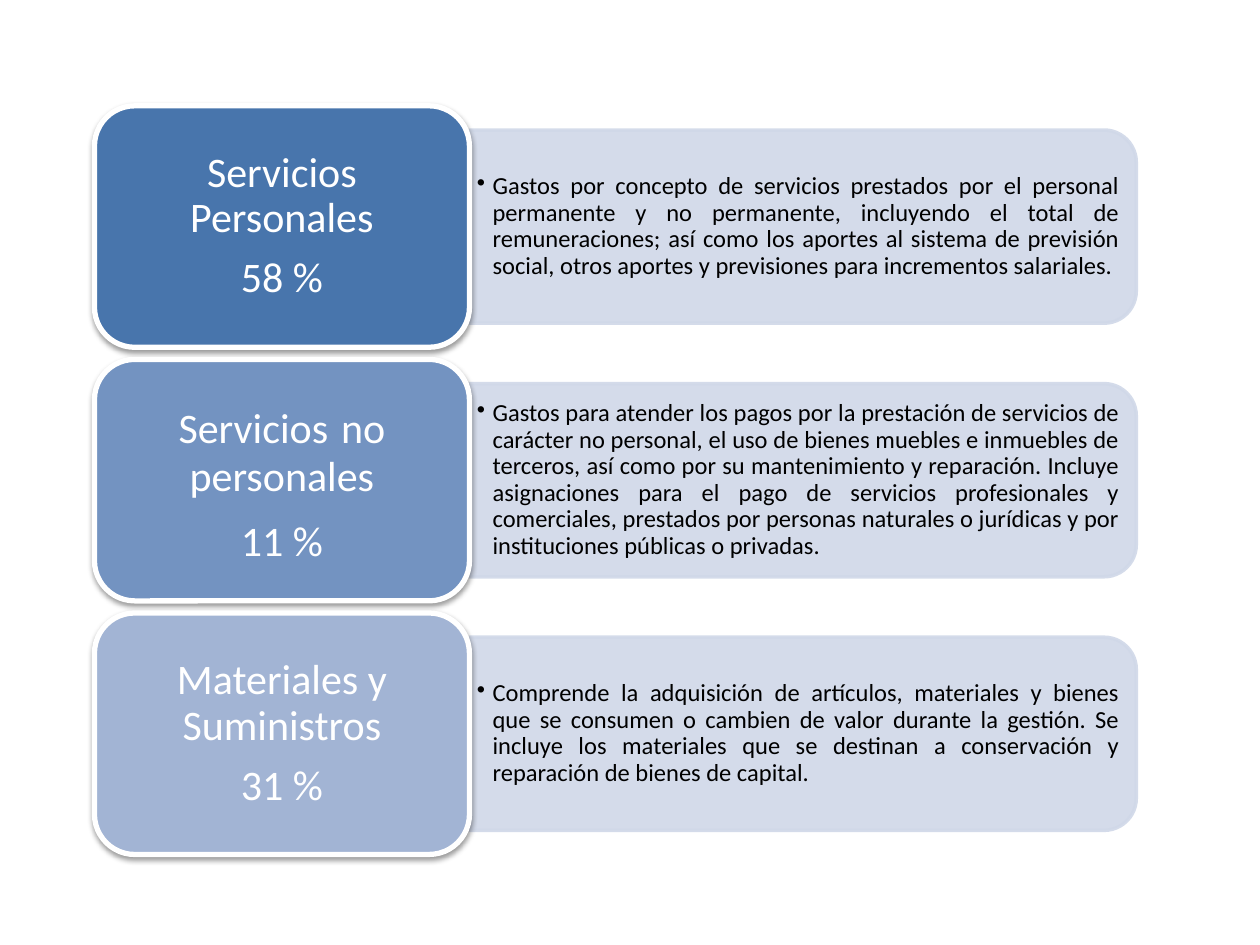
from lxml.etree import SubElement
from pptx import Presentation
from pptx.dml.color import RGBColor
from pptx.enum.shapes import MSO_SHAPE
from pptx.enum.text import MSO_ANCHOR, PP_ALIGN
from pptx.oxml.ns import qn
from pptx.util import Pt

# Each label is a list of paragraphs; a paragraph is a list of (text, size name).
CATEGORIES = [
    {
        "label": [[("Servicios Personales", "label")], [("58 %", "label")]],
        "color": "4875AC",
        "description": "Gastos por concepto de servicios prestados por el personal "
        "permanente y no permanente, incluyendo el total de remuneraciones; así como "
        "los aportes al sistema de previsión social, otros aportes y previsiones para "
        "incrementos salariales.",
    },
    {
        "label": [
            [("Servicios", "label"), (" ", "wide_space"), ("no personales", "label")],
            [("11 %", "label")],
        ],
        "color": "7393C1",
        "description": "Gastos para atender los pagos por la prestación de servicios de "
        "carácter no personal, el uso de bienes muebles e inmuebles de terceros, así "
        "como por su mantenimiento y reparación. Incluye asignaciones para el pago de "
        "servicios profesionales y comerciales, prestados por personas naturales o "
        "jurídicas y por instituciones públicas o privadas.",
    },
    {
        "label": [[("Materiales y Suministros", "label")], [("31 %", "label")]],
        "color": "A2B4D4",
        "description": "Comprende la adquisición de artículos, materiales y bienes que "
        "se consumen o cambien de valor durante la gestión. Se incluye los materiales "
        "que se destinan a conservación y reparación de bienes de capital.",
    },
]

THEME = {
    "font": "Calibri",
    "panel": "D0D8E8",
    "light": "FFFFFF",
    "dark": "000000",
    "sizes": {"label": 24, "wide_space": 32, "description": 14},
}

LEFT, TOP = 54, 60.5
LABEL_W, LABEL_H = 214.3, 138
PITCH = LABEL_H * 1.05
PANEL_W, PANEL_H = 381, LABEL_H * 0.8
DESCRIPTION_W, DESCRIPTION_H = 375.7, 99.6
BULLET_INDENT = 9


def set_alpha(color_format_parent, percent):
    for color in color_format_parent.iter(qn("a:srgbClr")):
        SubElement(color, qn("a:alpha"), val=str(percent * 1000))


def add_drop_shadow(shape):
    effects = shape._element.spPr.find(qn("a:effectLst"))
    shadow = SubElement(effects, qn("a:outerShdw"), blurRad=str(Pt(3.1)),
                        dist=str(Pt(1.6)), dir="5400000", rotWithShape="0")
    SubElement(shadow, qn("a:srgbClr"), val=THEME["dark"])
    set_alpha(shadow, 38)


def write_text(shape, paragraphs, *, color, align, space_after, bullet=False, insets=None):
    """Fill a shape with paragraphs; space_after is a share of the largest type size."""
    frame = shape.text_frame
    frame.word_wrap = True
    frame.vertical_anchor = MSO_ANCHOR.MIDDLE
    if insets:
        frame.margin_left = frame.margin_right = Pt(insets[0])
        frame.margin_top = frame.margin_bottom = Pt(insets[1])
    for index, runs in enumerate(paragraphs):
        paragraph = frame.add_paragraph() if index else frame.paragraphs[0]
        paragraph.alignment = align
        paragraph.line_spacing = 0.9
        largest = max(THEME["sizes"][size] for _, size in runs)
        paragraph.space_after = Pt(space_after * largest)
        if bullet:
            paragraph.level = 1
            properties = paragraph._p.get_or_add_pPr()
            properties.set("marL", str(Pt(BULLET_INDENT)))
            properties.set("indent", str(-Pt(BULLET_INDENT)))
            SubElement(properties, qn("a:buChar"), char="•")
        for text, size in runs:
            run = paragraph.add_run()
            run.text = text
            run.font.name = THEME["font"]
            run.font.size = Pt(THEME["sizes"][size])
            run.font.color.rgb = RGBColor.from_string(color)


def add_box(slide, preset, left, top, width, height, *, fill, line, line_width):
    box = slide.shapes.add_shape(preset, Pt(left), Pt(top), Pt(width), Pt(height))
    box.shadow.inherit = False
    box.fill.solid()
    box.fill.fore_color.rgb = RGBColor.from_string(fill)
    box.line.color.rgb = RGBColor.from_string(line)
    box.line.width = Pt(line_width)
    return box


def add_category(slide, category, top):
    middle = top + LABEL_H / 2
    panel_left = LEFT + LABEL_W

    # The panel is an upright shape turned a quarter, so its sides are swapped.
    panel = add_box(slide, MSO_SHAPE.ROUND_2_SAME_RECTANGLE,
                    panel_left + (PANEL_W - PANEL_H) / 2, middle - PANEL_W / 2,
                    PANEL_H, PANEL_W,
                    fill=THEME["panel"], line=THEME["panel"], line_width=2)
    panel.rotation = 90
    set_alpha(panel._element.spPr, 90)

    description = slide.shapes.add_textbox(
        Pt(panel_left), Pt(middle - DESCRIPTION_H / 2),
        Pt(DESCRIPTION_W), Pt(DESCRIPTION_H))
    write_text(description, [[(category["description"], "description")]],
               color=THEME["dark"], align=PP_ALIGN.JUSTIFY, space_after=0.15,
               bullet=True, insets=(4.2, 2.1))

    label = add_box(slide, MSO_SHAPE.ROUNDED_RECTANGLE, LEFT, top, LABEL_W, LABEL_H,
                    fill=category["color"], line=THEME["light"], line_width=3)
    add_drop_shadow(label)
    write_text(label, category["label"], color=THEME["light"],
               align=PP_ALIGN.CENTER, space_after=0.35)


def main():
    presentation = Presentation()
    presentation.slide_width, presentation.slide_height = Pt(720), Pt(540)
    slide = presentation.slides.add_slide(presentation.slide_layouts[6])
    for row, category in enumerate(CATEGORIES):
        add_category(slide, category, TOP + row * PITCH)
    presentation.save("out.pptx")


if __name__ == "__main__":
    main()
